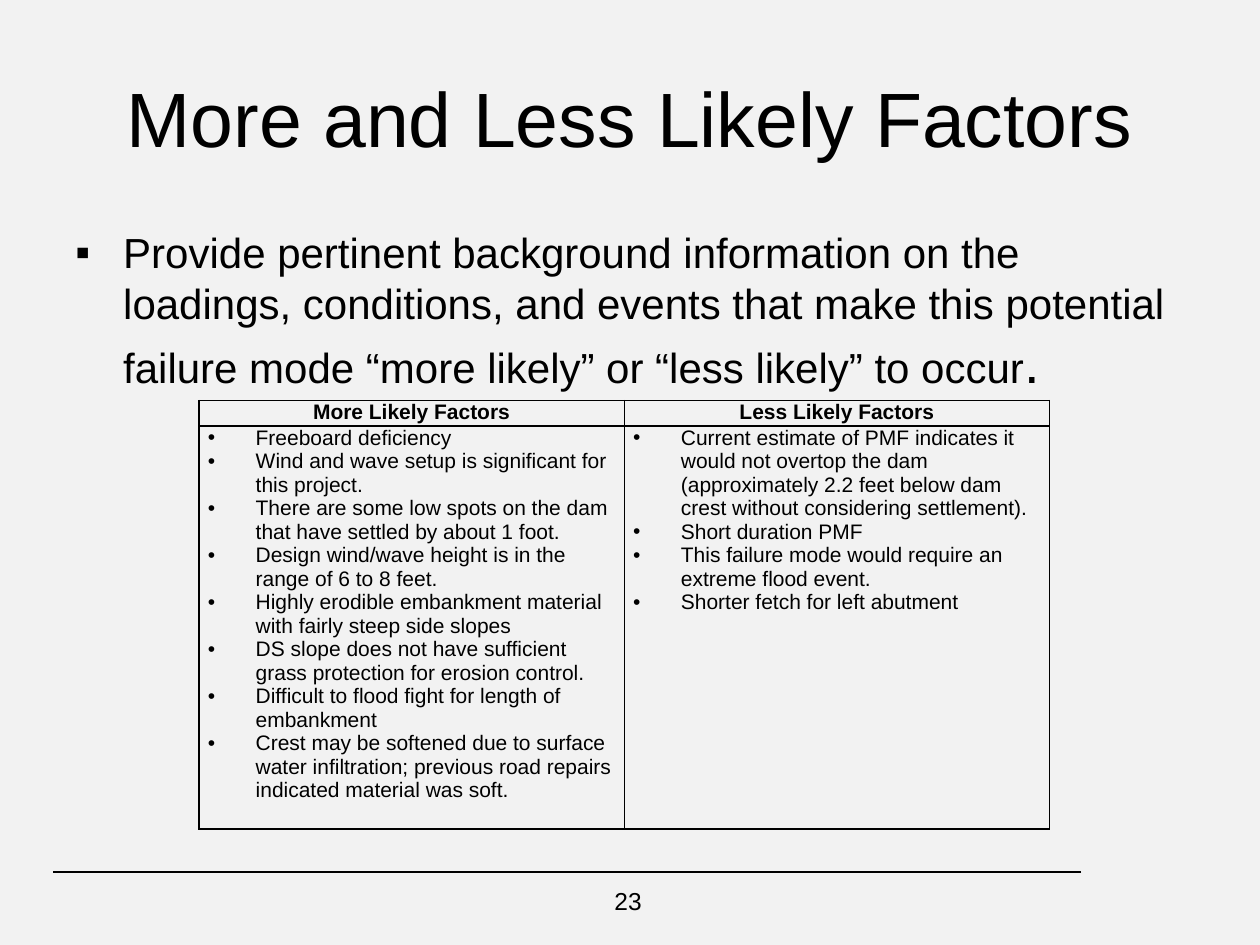
import pptx
import pptx.util
import pptx.dml.color
import pptx.enum.shapes
import pptx.enum.text
import pptx.oxml.ns
from lxml import etree
from pptx.util import Inches

COLORS = {"background": "F2F2F2", "ink": "000000"}
FONT = "Arial"
INDENT = 0.38
CENTER = pptx.enum.text.PP_ALIGN.CENTER

FACTORS = {
    "More Likely Factors": [
        "Freeboard deficiency",
        "Wind and wave setup is significant for this project.",
        "There are some low spots on the dam that have settled by about 1 foot.",
        "Design wind/wave height is in the range of 6 to 8 feet.",
        "Highly erodible embankment material with fairly steep side slopes",
        "DS slope does not have sufficient grass protection for erosion control.",
        "Difficult to flood fight for length of embankment",
        "Crest may be softened due to surface water infiltration; "
        "previous road repairs indicated material was soft.",
    ],
    "Less Likely Factors": [
        "Current estimate of PMF indicates it would not overtop the dam "
        "(approximately 2.2 feet below dam crest without considering settlement).",
        "Short duration PMF",
        "This failure mode would require an extreme flood event.",
        "Shorter fetch for left abutment",
    ],
}


def color(name):
    return pptx.dml.color.RGBColor.from_string(COLORS[name])


def add_element(parent, tag, **attributes):
    element = etree.SubElement(parent, pptx.oxml.ns.qn(tag))
    for key, value in attributes.items():
        element.set(key, str(value))
    return element


def add_run(paragraph, text, size, bold=False):
    run = paragraph.add_run()
    run.text = text
    run.font.name = FONT
    run.font.size = pptx.util.Pt(size)
    run.font.bold = bold
    run.font.color.rgb = color("ink")


def set_bullet(paragraph, character, tab=None):
    """Give the paragraph a hanging bullet and, if asked, a left tab stop."""
    properties = paragraph._p.get_or_add_pPr()
    properties.set("marL", str(Inches(INDENT)))
    properties.set("indent", str(-Inches(INDENT)))
    add_element(properties, "a:buFont", typeface=FONT)
    add_element(properties, "a:buChar", char=character)
    if tab is not None:
        tabs = add_element(properties, "a:tabLst")
        add_element(tabs, "a:tab", pos=Inches(tab), algn="l")


def add_text_box(slide, left, top, width, height):
    frame = slide.shapes.add_textbox(
        Inches(left), Inches(top), Inches(width), Inches(height)).text_frame
    frame.word_wrap = True
    return frame


def add_centered_text(slide, text, size, left, top, width, height):
    frame = add_text_box(slide, left, top, width, height)
    frame.paragraphs[0].alignment = CENTER
    add_run(frame.paragraphs[0], text, size)
    return frame


def add_rule(slide, start, end, y):
    line = slide.shapes.add_connector(
        pptx.enum.shapes.MSO_CONNECTOR.STRAIGHT,
        Inches(start), Inches(y), Inches(end), Inches(y))
    line.line.color.rgb = color("ink")
    line.line.width = pptx.util.Pt(0.75)
    add_element(line._element.spPr, "a:effectLst")


def format_cell(cell, top, bottom):
    """Clear the fill, set the margins and draw the four borders."""
    cell.margin_left = cell.margin_right = Inches(0.07)
    cell.margin_top = cell.margin_bottom = 0
    properties = cell._tc.get_or_add_tcPr()
    for side, width in (("L", 1), ("R", 1), ("T", top), ("B", bottom)):
        border = add_element(properties, "a:ln" + side, w=pptx.util.Pt(width))
        fill = add_element(border, "a:solidFill")
        add_element(fill, "a:srgbClr", val=COLORS["ink"])
    cell.fill.background()


def add_factor_table(slide, left, top, width, row_heights):
    table = slide.shapes.add_table(
        len(row_heights), len(FACTORS), Inches(left), Inches(top),
        Inches(width), Inches(sum(row_heights))).table
    table.first_row = table.horz_banding = False
    for row, height in zip(table.rows, row_heights):
        row.height = Inches(height)

    for column, (heading, factors) in enumerate(FACTORS.items()):
        header, body = table.cell(0, column), table.cell(1, column)
        format_cell(header, top=1, bottom=1.5)
        format_cell(body, top=1.5, bottom=1)

        paragraph = header.text_frame.paragraphs[0]
        paragraph.alignment = CENTER
        add_run(paragraph, heading, 12, bold=True)

        frame = body.text_frame
        for index, factor in enumerate(factors):
            paragraph = frame.add_paragraph() if index else frame.paragraphs[0]
            set_bullet(paragraph, "•", tab=0.25)
            add_run(paragraph, factor, 12)


def main():
    presentation = pptx.Presentation()
    presentation.slide_width = Inches(10)
    presentation.slide_height = Inches(7.5)
    slide = presentation.slides.add_slide(presentation.slide_layouts[6])
    slide.background.fill.solid()
    slide.background.fill.fore_color.rgb = color("background")

    # Footer rule
    add_rule(slide, 8.58, 0.42, 6.92)

    # Title
    title = add_centered_text(
        slide, "More and Less Likely Factors", 44, 0.5, 0.3, 9, 1.25)
    title.vertical_anchor = pptx.enum.text.MSO_ANCHOR.MIDDLE

    # Introduction
    introduction = add_text_box(slide, 0.5, 1.75, 9, 2.04).paragraphs[0]
    set_bullet(introduction, "▪")
    add_run(introduction,
            "Provide pertinent background information on the loadings, "
            "conditions, and events that make this potential failure mode "
            "“more likely” or “less likely” to occur", 24)
    add_run(introduction, ".", 32)

    # Slide number
    add_centered_text(slide, "23", 14, 3.82, 6.98, 2.33, 0.52)

    # Factors
    add_factor_table(slide, 1.58, 3.18, 6.75, (0.19, 2.99))

    presentation.save("out.pptx")


if __name__ == "__main__":
    main()
